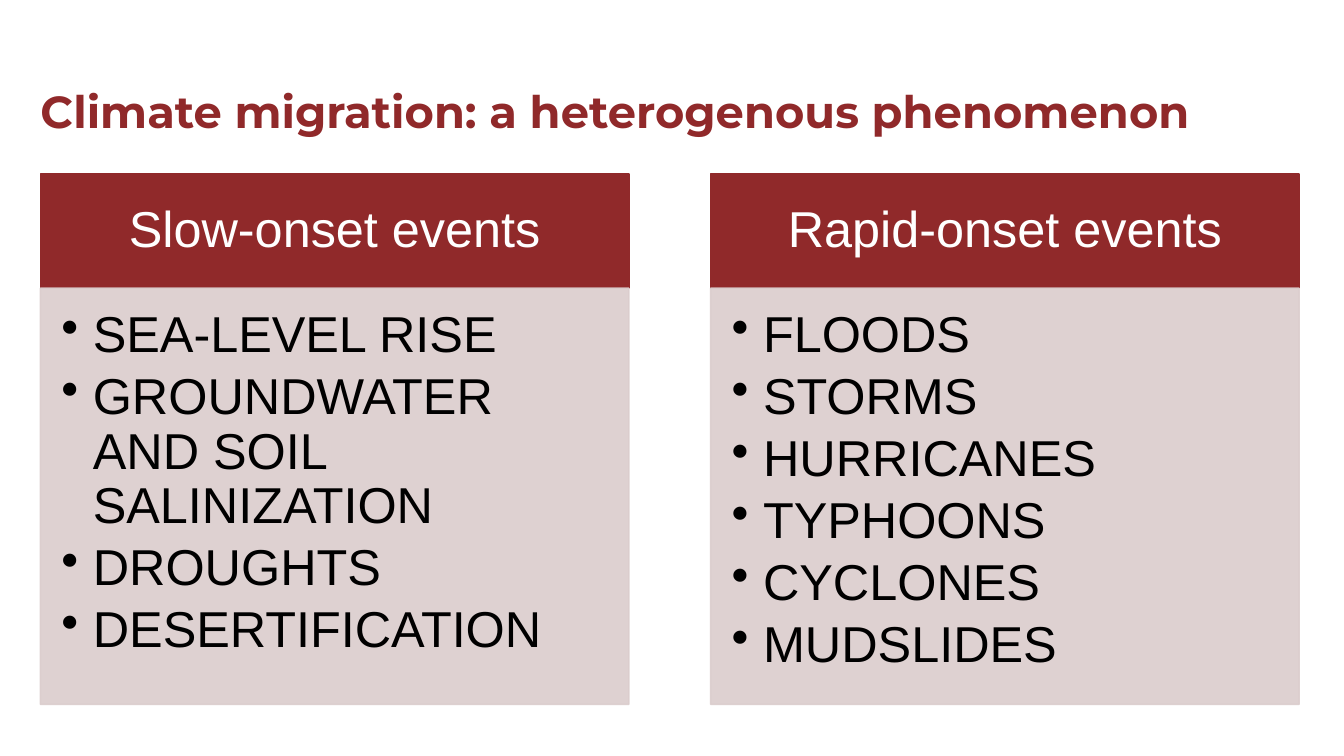
import dataclasses

import lxml.etree
import pptx
import pptx.dml.color
import pptx.enum.shapes
import pptx.enum.text
import pptx.oxml.ns
import pptx.util

Cm = pptx.util.Cm
Pt = pptx.util.Pt
qn = pptx.oxml.ns.qn
Align = pptx.enum.text.PP_ALIGN
Anchor = pptx.enum.text.MSO_ANCHOR


@dataclasses.dataclass(frozen=True)
class Theme:
    accent: str = "90292A"
    panel: str = "DBCDCD"
    light: str = "FFFFFF"
    dark: str = "000000"
    title_font: str = "Montserrat"
    body_font: str = "Arial"
    title_size: int = 32
    body_size: int = 36


class SlideBuilder:
    def __init__(self, page, theme):
        self.page = page
        self.theme = theme

    def set_insets(self, frame, left, top, right, bottom):
        frame.word_wrap = True
        frame.margin_left, frame.margin_top = Cm(left), Cm(top)
        frame.margin_right, frame.margin_bottom = Cm(right), Cm(bottom)

    def add_span(self, para, text, font, size, color, bold=False):
        span = para.add_run()
        span.text = text
        span.font.name = font
        span.font.size = Pt(size)
        span.font.bold = bold
        span.font.color.rgb = pptx.dml.color.RGBColor.from_string(color)

    def add_title(self, text, left, top, width, height):
        box = self.page.shapes.add_textbox(Cm(left), Cm(top), Cm(width), Cm(height))
        self.set_insets(box.text_frame, 0, 0.13, 0.25, 0.13)
        para = box.text_frame.paragraphs[0]
        para.line_spacing = 0.95
        self.add_span(para, text, self.theme.title_font, self.theme.title_size,
                      self.theme.accent, bold=True)

    def add_block(self, left, top, width, height, color, opacity=100):
        block = self.page.shapes.add_shape(
            pptx.enum.shapes.MSO_SHAPE.RECTANGLE,
            Cm(left), Cm(top), Cm(width), Cm(height))
        block.shadow.inherit = False
        block.line.width = Pt(1)
        block.fill.solid()
        for paint in (block.fill.fore_color, block.line.color):
            paint.rgb = pptx.dml.color.RGBColor.from_string(color)
        if opacity < 100:
            for swatch in block.fill._xPr.iter(qn("a:srgbClr")):
                lxml.etree.SubElement(swatch, qn("a:alpha"), val=str(opacity * 1000))
        return block

    def add_header(self, text, left, top, width, height):
        block = self.add_block(left, top, width, height, self.theme.accent)
        frame = block.text_frame
        self.set_insets(frame, 0.71, 0.41, 0.71, 0.41)
        frame.vertical_anchor = Anchor.MIDDLE
        para = frame.paragraphs[0]
        para.alignment = Align.CENTER
        para.line_spacing = 0.9
        self.add_span(para, text, self.theme.body_font, self.theme.body_size,
                      self.theme.light)

    def add_bullets(self, items, left, top, width, height):
        block = self.add_block(left, top, width, height, self.theme.panel, opacity=90)
        frame = block.text_frame
        self.set_insets(frame, 0.53, 0.53, 0.71, 0.81)
        frame.vertical_anchor = Anchor.TOP
        for index, item in enumerate(items):
            para = frame.add_paragraph() if index else frame.paragraphs[0]
            para.alignment = Align.LEFT
            para.line_spacing = 0.9
            para.space_after = Pt(0.15 * self.theme.body_size)
            properties = para._p.get_or_add_pPr()
            properties.set("marL", str(Cm(0.79)))
            properties.set("indent", str(-Cm(0.79)))
            lxml.etree.SubElement(properties, qn("a:buChar"), char="•")
            self.add_span(para, item, self.theme.body_font, self.theme.body_size,
                          self.theme.dark)


def main():
    deck = pptx.Presentation()
    deck.slide_width, deck.slide_height = Cm(33.87), Cm(19.05)
    page = deck.slides.add_slide(deck.slide_layouts[6])
    builder = SlideBuilder(page, Theme())

    margin, column_width, column_step = 1.02, 14.83, 16.89
    header_top, header_height, list_height = 4.39, 2.87, 10.49
    columns = {
        "Slow-onset events": [
            "SEA-LEVEL RISE", "GROUNDWATER AND SOIL SALINIZATION",
            "DROUGHTS", "DESERTIFICATION"],
        "Rapid-onset events": [
            "FLOODS", "STORMS", "HURRICANES", "TYPHOONS", "CYCLONES", "MUDSLIDES"],
    }

    builder.add_title("Climate migration: a heterogenous phenomenon",
                      margin, 2.08, column_step + column_width, 1.57)
    for index, (heading, events) in enumerate(columns.items()):
        left = margin + index * column_step
        builder.add_header(heading, left, header_top, column_width, header_height)
        builder.add_bullets(events, left, header_top + header_height,
                            column_width, list_height)

    deck.save("out.pptx")


if __name__ == "__main__":
    main()
